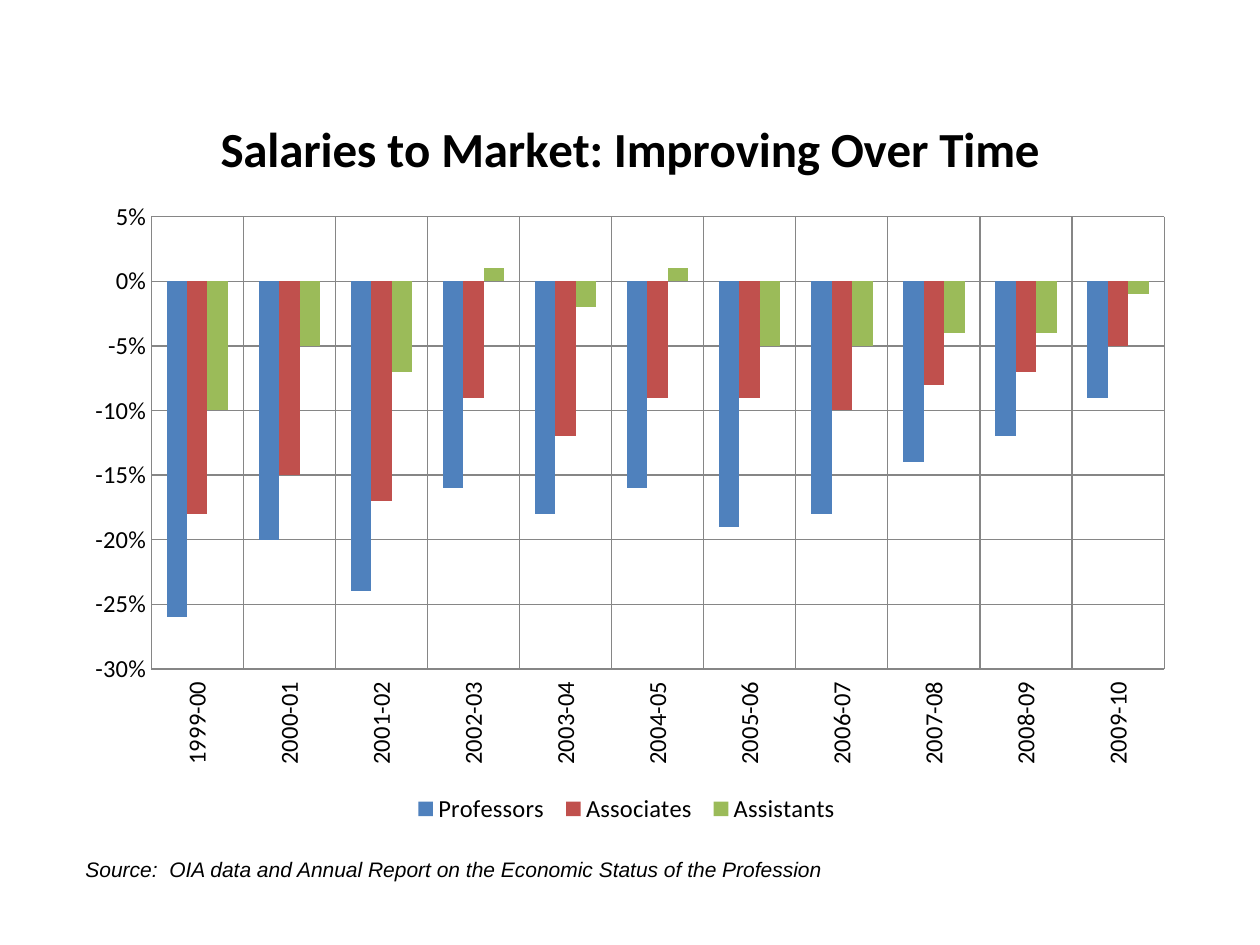
from lxml import etree
from pptx import Presentation
from pptx.chart.data import CategoryChartData as Data
from pptx.dml.color import RGBColor as RGB
from pptx.enum.chart import XL_CHART_TYPE as Kind, XL_LEGEND_POSITION as Spot
from pptx.enum.chart import XL_TICK_LABEL_POSITION as Label, XL_TICK_MARK as Tick
from pptx.enum.text import MSO_AUTO_SIZE as Fit
from pptx.oxml.ns import qn
from pptx.util import Inches, Pt

COLORS = {"text": "000000", "grid": "868686", "Professors ": "4F81BD",
          "Associates ": "C0504D", "Assistants ": "9BBB59"}
RATES = {
    "Professors ": [-0.26, -0.20, -0.24, -0.16, -0.18, -0.16,
                    -0.19, -0.18, -0.14, -0.12, -0.09],
    "Associates ": [-0.18, -0.15, -0.17, -0.09, -0.12, -0.09,
                    -0.09, -0.10, -0.08, -0.07, -0.05],
    "Assistants ": [-0.10, -0.05, -0.07, 0.01, -0.02, 0.01,
                    -0.05, -0.05, -0.04, -0.04, -0.01],
}
WIDTH, HEIGHT = 8.83, 5.83


def style(font, **values):
    values = {"name": "Calibri", "bold": False, "italic": False} | values
    for key, value in values.items():
        setattr(font, key, value)
    font.color.rgb = RGB.from_string(COLORS["text"])


def place(part, index, modes, **sides):
    """Fix a chart part at the given inches within the chart frame."""
    for old in part.findall(qn("c:layout")):
        part.remove(old)
    layout = etree.Element(qn("c:layout"))
    part.insert(index, layout)
    manual = etree.SubElement(layout, qn("c:manualLayout"))
    shares = {side: str(size / (WIDTH if side in "xw" else HEIGHT))
              for side, size in sides.items()}
    for tag, value in (modes | shares).items():
        etree.SubElement(manual, qn(f"c:{tag}")).set("val", value)


deck = Presentation()
deck.slide_width, deck.slide_height = Inches(10), Inches(7.5)
slide = deck.slides.add_slide(deck.slide_layouts[6])

# Salary gap chart
data = Data(number_format="0%")
data.categories = [f"{year}-{(year + 1) % 100:02d}" for year in range(1999, 2010)]
for name, rates in RATES.items():
    data.add_series(name, rates)
chart = slide.shapes.add_chart(Kind.COLUMN_CLUSTERED, Inches(0.58), Inches(0.75),
                               Inches(WIDTH), Inches(HEIGHT), data).chart
style(chart.font, size=Pt(10))

chart.has_title = True
title = chart.chart_title
title.include_in_layout = False
title.text_frame.text = "Salaries to Market: Improving Over Time"
head = title.text_frame.paragraphs[0]
for font in (head.font, head.runs[0].font):
    style(font, size=Pt(28), bold=True)

chart.has_legend = True
legend = chart.legend
legend.position = Spot.BOTTOM
legend.include_in_layout = False
style(legend.font, size=Pt(14))

plot = chart.plots[0]
plot.vary_by_categories = False
plot.gap_width, plot.overlap = 150, 0
for bars in plot.series:
    bars.invert_if_negative = False
    bars.format.fill.solid()
    bars.format.fill.fore_color.rgb = RGB.from_string(COLORS[bars.name])

years, scale = chart.category_axis, chart.value_axis
for axis in (years, scale):
    axis.has_major_gridlines = True
    axis.major_tick_mark = axis.minor_tick_mark = Tick.NONE
    style(axis.tick_labels.font, size=Pt(14))
    for line in (axis.format.line, axis.major_gridlines.format.line):
        line.color.rgb = RGB.from_string(COLORS["grid"])
        line.width = Pt(0.75)
years.tick_label_position = Label.LOW
years._element.find(qn("c:txPr")).find(qn("a:bodyPr")).set("rot", "-5400000")
scale.minimum_scale, scale.maximum_scale, scale.major_unit = -0.3, 0.05, 0.05
scale.tick_labels.number_format = "0%"
scale.tick_labels.number_format_is_linked = False

edges = {"xMode": "edge", "yMode": "edge"}
place(title._element, 1, edges, x=1.1, y=0.1)
place(chart._chartSpace.chart.plotArea, 0, {"layoutTarget": "inner"} | edges,
      x=0.62, y=0.97, w=8.04, h=3.59)

# Source line
frame = slide.shapes.add_textbox(Inches(0.58), Inches(6.75),
                                 Inches(8.5), Inches(0.3)).text_frame
frame.word_wrap = True
frame.auto_size = Fit.SHAPE_TO_FIT_TEXT
frame.text = "Source:  OIA data and Annual Report on the Economic Status of the Profession"
style(frame.paragraphs[0].runs[0].font, name="Arial", size=Pt(12), italic=True)

deck.save("out.pptx")
